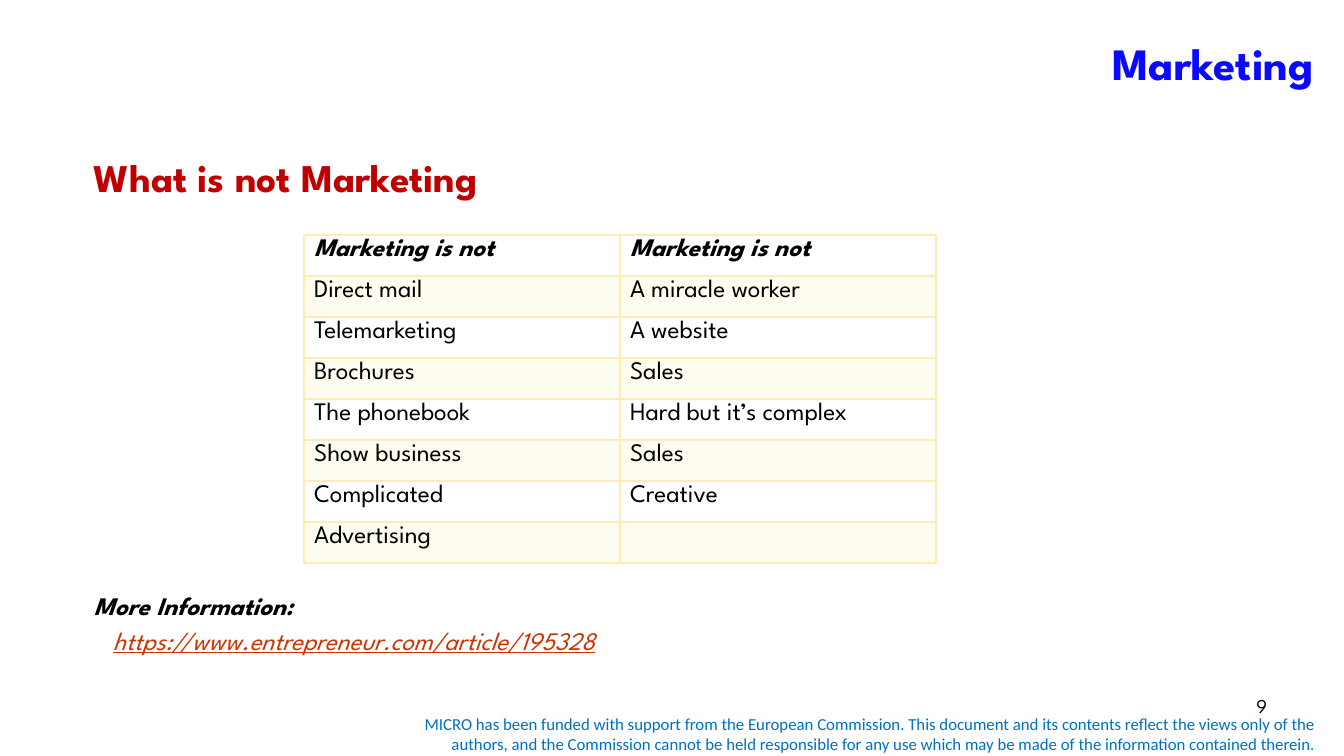
from lxml.etree import SubElement
from pptx import Presentation
from pptx.dml.color import RGBColor
from pptx.enum.text import MSO_ANCHOR, PP_ALIGN
from pptx.oxml.ns import qn
from pptx.util import Emu, Pt

ROWS = [
    ("Marketing is not", "Marketing is not"),
    ("Direct mail", "A miracle worker"),
    ("Telemarketing", "A website"),
    ("Brochures", "Sales"),
    ("The phonebook", "Hard but it’s complex"),
    ("Show business", "Sales"),
    ("Complicated", "Creative"),
    ("Advertising", ""),
]
FUNDING = (
    "MICRO has been funded with support from the European Commission. "
    "This document and its contents reflect the views only of the authors, "
    "and the Commission cannot be held responsible for any use which may be "
    "made of the information contained therein."
)


def px(n):
    return Emu(round(n * 12192000 / 1344))


def color(code):
    return RGBColor.from_string(code)


class Deck:
    """Holds the style and the current slide, and draws its elements."""

    face = "League Spartan"
    black = "000000"
    gold = "FDECB3"

    def __init__(self):
        self.prs = Presentation()
        self.prs.slide_width, self.prs.slide_height = px(1344), px(756)
        self.slide = self.prs.slides.add_slide(self.prs.slide_layouts[5])

    def style(self, para, size, code, bold=False, italic=False, line=False, face=None):
        for font in [para.font] + [run.font for run in para.runs]:
            font.name, font.size = face or self.face, Pt(size)
            font.bold, font.italic, font.underline = bold, italic, line
            font.color.rgb = color(code)

    def title(self, text, box, size, code):
        shape = self.slide.shapes.title
        shape.left, shape.top, shape.width, shape.height = map(px, box)
        frame = shape.text_frame
        frame.text = text
        frame.vertical_anchor = MSO_ANCHOR.MIDDLE
        para = frame.paragraphs[0]
        para.alignment = PP_ALIGN.RIGHT
        self.style(para, size, code, bold=True)

    def text(self, text, box, size, code, align=PP_ALIGN.LEFT,
             anchor=MSO_ANCHOR.TOP, **look):
        frame = self.slide.shapes.add_textbox(*map(px, box)).text_frame
        frame.word_wrap = True
        frame.vertical_anchor = anchor
        frame.text = text
        para = frame.paragraphs[0]
        para.alignment = align
        self.style(para, size, code, **look)
        return frame

    def link(self, frame, text, size, code, indent):
        para = frame.add_paragraph()
        para.text = text
        para.space_before = Pt(3.6)
        props = para._p.get_or_add_pPr()
        props.set("marL", str(px(indent)))
        props.set("indent", "0")
        self.style(para, size, code, italic=True, line=True)

    def edge(self, cell, side, width):
        line = SubElement(cell._tc.get_or_add_tcPr(), qn(f"a:ln{side}"), w=str(Pt(width)))
        SubElement(SubElement(line, qn("a:solidFill")), qn("a:srgbClr"), val=self.gold)

    def cell(self, cell, text, row):
        cell.text = text
        cell.margin_top, cell.margin_bottom = px(4), 0
        para = cell.text_frame.paragraphs[0]
        self.style(para, 18, self.black, bold=row == 0, italic=row == 0)
        for side in "LRTB":
            heavy = (row, side) in ((0, "B"), (1, "T"))
            self.edge(cell, side, 2 if heavy else 1)
        if row % 2:
            cell.fill.solid()
            cell.fill.fore_color.rgb = color(self.gold)
            tint = cell._tc.tcPr.find(qn("a:solidFill"))[0]
            SubElement(tint, qn("a:alpha"), val="20000")
        else:
            cell.fill.background()

    def table(self, rows, left, top, wide, high):
        count, cols = len(rows), len(rows[0])
        box = (left, top, wide * cols, high * count)
        table = self.slide.shapes.add_table(count, cols, *map(px, box)).table
        table.first_row = table.horz_banding = False
        for r, words in enumerate(rows):
            table.rows[r].height = px(high)
            for c, word in enumerate(words):
                self.cell(table.cell(r, c), word, r)


def main():
    deck = Deck()
    deck.text(FUNDING, (378, 709, 948, 50), 12, "0070C0", PP_ALIGN.RIGHT,
              MSO_ANCHOR.MIDDLE, face="Calibri")
    deck.title("Marketing", (115, 0, 1209, 126), 32, "0B0AFD")
    deck.text("9", (964, 689, 313, 52), 14, deck.black, PP_ALIGN.RIGHT)
    deck.text("What is not Marketing", (84, 148, 1210, 60), 28, "C00000", bold=True)
    info = deck.text("More Information:", (84, 585, 1210, 80), 18, deck.black,
                     bold=True, italic=True)
    deck.link(info, "https://www.entrepreneur.com/article/195328", 18, "CC3300", 19)
    deck.table(ROWS, 304, 235, 316, 41)
    deck.prs.save("out.pptx")


if __name__ == "__main__":
    main()
